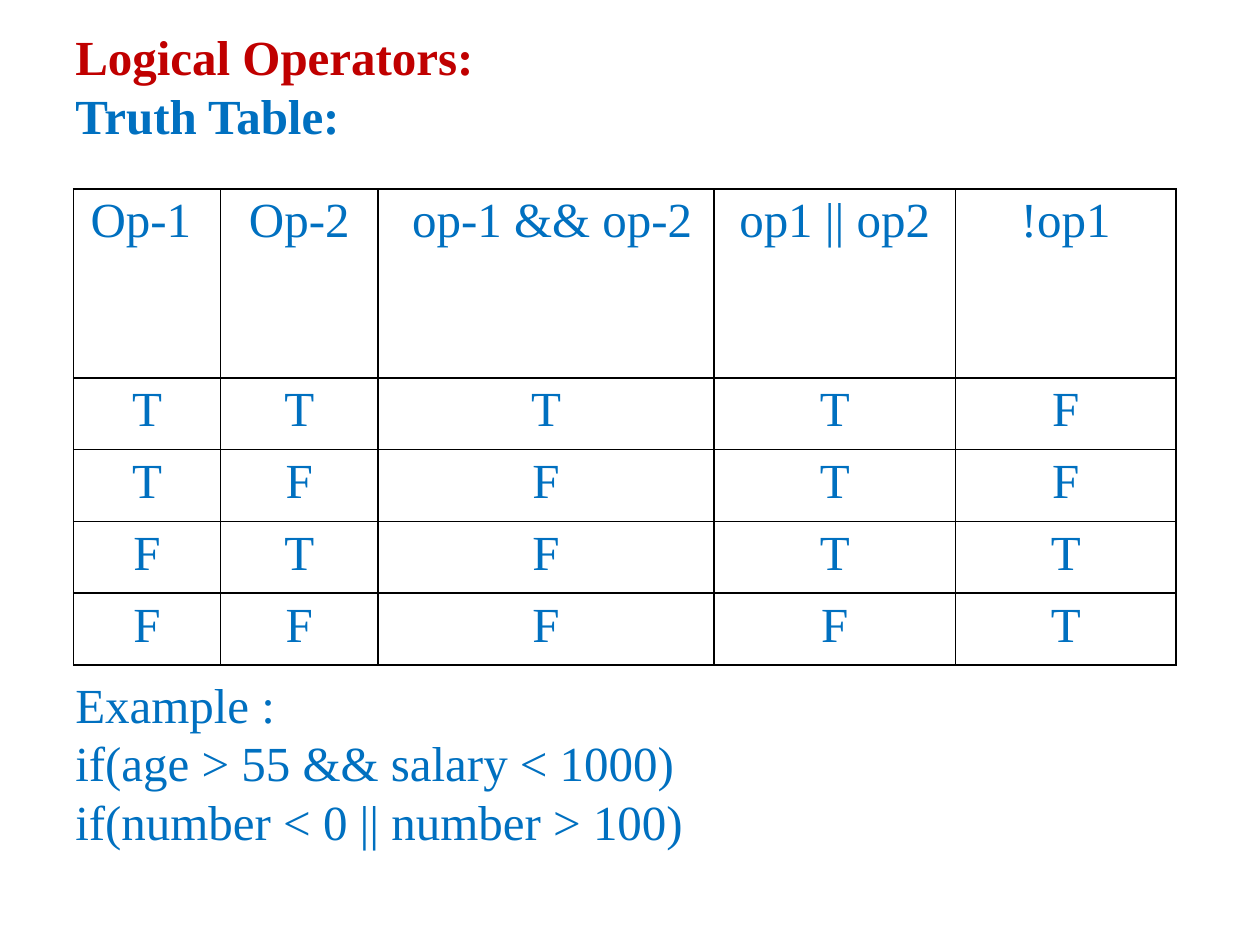
"""Build a slide with the truth table of the logical operators."""
from lxml import etree
from pptx import Presentation, util as u
from pptx.dml.color import RGBColor
from pptx.enum import text
from pptx.oxml import ns

RED, BLUE, BLACK = "C00000", "0070C0", "000000"
BODY = {"name": "Times New Roman", "size": u.Pt(28), "bold": False}
HEADING = {**BODY, "bold": True}
LINES = [
    ("Logical Operators:", HEADING, RED, 0),
    ("Truth Table:", HEADING, BLUE, 0),
    ("Example :", BODY, BLUE, 303.2),
    ("if(age > 55 && salary < 1000)", BODY, BLUE, 0),
    ("if(number < 0 || number > 100)", BODY, BLUE, 0),
]
TRUTH_ROWS = [
    ["Op-1 ", "Op-2", " op-1 && op-2", "op1 || op2", "!op1"],
    *(list(values) for values in ("TTTTF", "TFFTF", "FTFTT", "FFFFT")),
]
COLUMN_WIDTHS = [84, 90, 192, 138, 126]
ROW_HEIGHTS = [108] + [41] * 4


def set_color(target, value):
    """Give a font or a fill format a colour from a hex string."""
    target.rgb = RGBColor.from_string(value)


def write_run(paragraph, words, font_format, color):
    """Add a formatted run to a paragraph."""
    run = paragraph.add_run()
    run.text = words
    for name, value in font_format.items():
        setattr(run.font, name, value)
    set_color(run.font.color, color)


def add_text(slide, left, top, width, height, lines):
    """Add a wrapping text box with one paragraph for each line."""
    frame = slide.shapes.add_textbox(*map(u.Pt, (left, top, width, height))).text_frame
    frame.word_wrap = True
    for index, (words, font_format, color, gap) in enumerate(lines):
        paragraph = frame.add_paragraph() if index else frame.paragraphs[0]
        paragraph.line_spacing = u.Pt(33.4)
        paragraph.space_before = u.Pt(gap)
        write_run(paragraph, words, font_format, color)


def add_borders(cell, color):
    """Draw a one-point line on all four sides of a cell."""
    properties = cell._tc.get_or_add_tcPr()
    for side in ("a:lnL", "a:lnR", "a:lnT", "a:lnB"):
        line = etree.SubElement(properties, ns.qn(side), w=str(u.Pt(1)))
        fill = etree.SubElement(line, ns.qn("a:solidFill"))
        etree.SubElement(fill, ns.qn("a:srgbClr"), val=color)


def fill_cell(cell, words):
    """Write centred text in a bordered cell without a fill."""
    cell.margin_top = cell.margin_bottom = u.Pt(3)
    paragraph = cell.text_frame.paragraphs[0]
    paragraph.alignment = text.PP_ALIGN.CENTER
    write_run(paragraph, words, BODY, BLUE)
    add_borders(cell, BLACK)
    cell.fill.background()


def add_truth_table(slide, left, top, rows, widths, heights):
    """Add a table sized by its column widths and row heights."""
    frame = slide.shapes.add_table(
        len(rows), len(widths), *map(u.Pt, (left, top, sum(widths), sum(heights))))
    table = frame.table
    for name in ("first_row", "horz_banding"):
        setattr(table, name, False)
    for column, width in zip(table.columns, widths):
        column.width = u.Pt(width)
    for row, height, values in zip(table.rows, heights, rows):
        row.height = u.Pt(height)
        for cell, words in zip(row.cells, values):
            fill_cell(cell, words)


def main():
    """Create the presentation and save it."""
    presentation = Presentation()
    presentation.slide_width, presentation.slide_height = u.Pt(720), u.Pt(540)
    slide = presentation.slides.add_slide(presentation.slide_layouts[6])
    add_text(slide, 36, 12, 648, 498, LINES)
    add_truth_table(slide, 42, 108, TRUTH_ROWS, COLUMN_WIDTHS, ROW_HEIGHTS)
    presentation.save("out.pptx")


if __name__ == "__main__":
    main()
